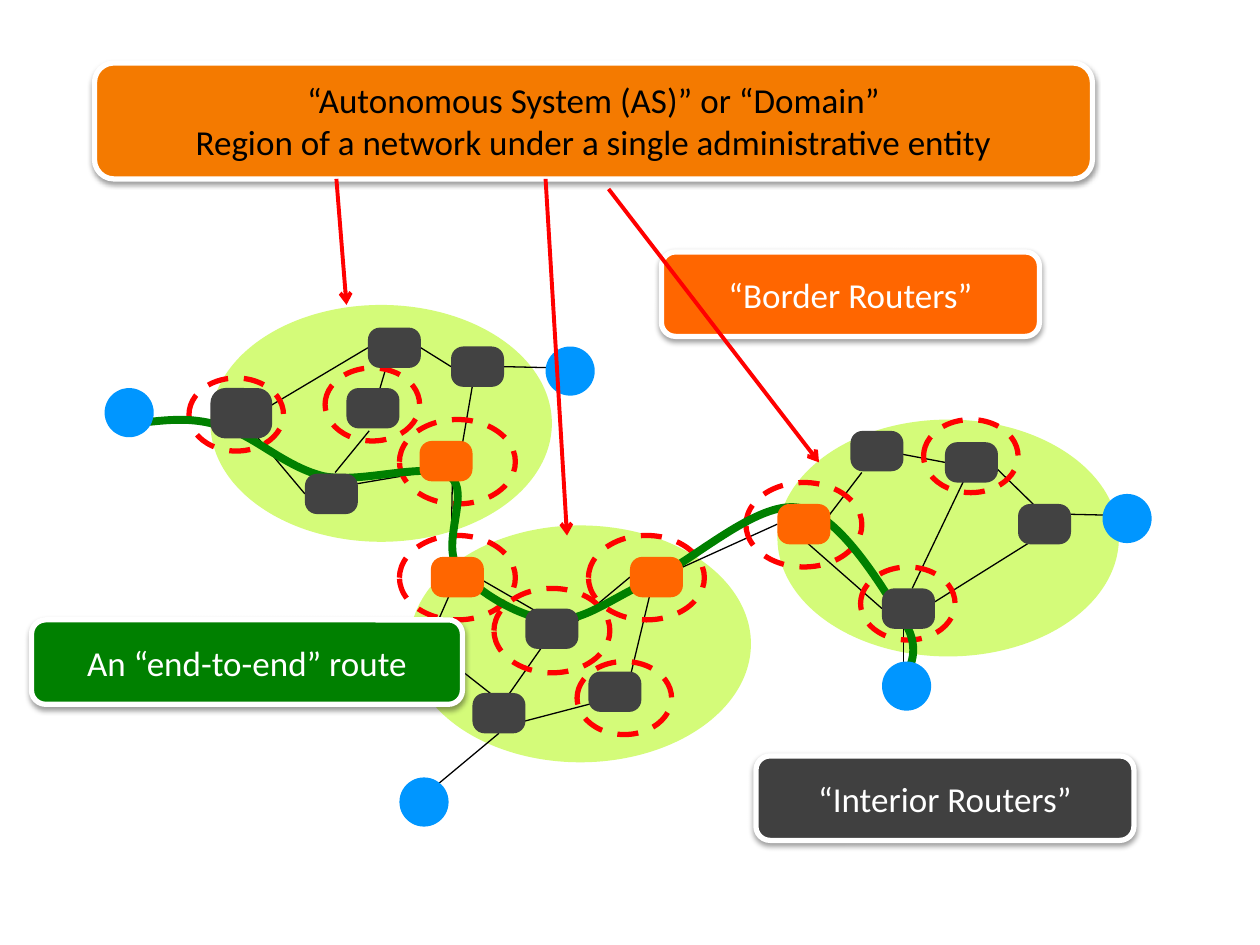
from lxml.etree import SubElement
from pptx import Presentation
from pptx.dml.color import RGBColor
from pptx.enum.dml import MSO_LINE
from pptx.enum.shapes import MSO_CONNECTOR, MSO_SHAPE
from pptx.enum.text import MSO_ANCHOR, PP_ALIGN
from pptx.oxml.ns import qn
from pptx.util import Emu, Pt

PX = 9144  # 100 px to the inch

BLACK, WHITE, RED, GREEN = "000000", "FFFFFF", "FF0000", "008000"
LIME, BLUE, ORANGE, GRAY = "D4FB79", "0096FF", "FF6600", "424242"

DOMAINS = [(325, 417), (617, 333), (167, 242)]
DOMAIN_SIZE = (271, 188)
HOSTS = [(83, 308), (317, 617), (433, 275), (700, 525), (875, 392)]
HOST_SIZE = (39, 39)

INTERIOR_ROUTERS = [(242, 376), (292, 260), (275, 308), (358, 275), (375, 550), (417, 483),
                    (467, 533), (750, 351), (675, 342), (700, 467), (808, 400)]
BORDER_ROUTERS = [(617, 400), (333, 350), (342, 442), (500, 442)]
ROUTER_SIZE = (42, 32)
EDGE_ROUTER = (167, 308, 49, 40)

BORDER_RINGS = [(467, 425), (592, 383), (317, 333), (317, 425)]
INTERIOR_RINGS = [(150, 300, 75, 58), (392, 467, 92, 67), (258, 292, 75, 58),
                  (458, 525, 75, 58), (733, 333, 75, 58), (683, 450, 75, 58)]
RING_SIZE = (92, 67)

LINKS = [
    (117, 332, 160, 332), (400, 291, 443, 292), (842, 408, 885, 409), (342, 627, 396, 582),
    (208, 326, 292, 274), (376, 300, 366, 358), (200, 342, 242, 391), (293, 342, 266, 375),
    (283, 384, 342, 374), (358, 291, 333, 275), (309, 283, 299, 317), (359, 383, 358, 440),
    (434, 490, 375, 456), (341, 508, 359, 467), (357, 525, 399, 558), (517, 467, 499, 542),
    (500, 457, 458, 493), (410, 574, 475, 557), (399, 558, 434, 508), (617, 416, 542, 450),
    (634, 425, 700, 482), (826, 425, 735, 482), (750, 366, 708, 359), (684, 375, 658, 409),
    (826, 406, 785, 366), (724, 467, 768, 375), (717, 533, 717, 498),
]
ARROWS = [(267, 142, 275, 242), (433, 142, 450, 425), (483, 150, 650, 367)]

# Start point, then two control points and an end point for every curve
ROUTE = [(117, 335),
         (136, 333), (155, 331), (178, 339), (202, 346), (227, 371), (257, 378),
         (287, 384), (339, 366), (357, 378), (374, 390), (350, 430), (363, 450),
         (377, 469), (412, 490), (437, 492), (463, 494), (483, 476), (516, 461),
         (549, 446), (601, 397), (634, 403), (668, 408), (704, 473), (718, 494),
         (732, 516), (720, 533), (720, 533)]

BACK_BANNERS = [
    ((600, 600, 300, 67), "404040", WHITE, ["“Interior Routers”"]),
    ((75, 50, 792, 92), "F47A00", BLACK,
     ["“Autonomous System (AS)” or “Domain”",
      "Region of a network under a single administrative entity"]),
]
FRONT_BANNERS = [
    ((525, 200, 300, 67), ORANGE, WHITE, ["“Border Routers”"]),
    ((25, 492, 342, 67), GREEN, WHITE, ["An “end-to-end” route"]),
]


def color(value):
    return RGBColor.from_string(value)


def draw_line(line, value, points):
    line.color.rgb = color(value)
    line.width = Pt(points)


def add_shape(shapes, kind, place, fill=None):
    shape = shapes.add_shape(kind, *(Emu(n * PX) for n in place))
    shape.shadow.inherit = False
    if fill:
        shape.fill.solid()
        shape.fill.fore_color.rgb = color(fill)
    else:
        shape.fill.background()
    shape.line.fill.background()
    return shape


def add_ring(shapes, place):
    ring = add_shape(shapes, MSO_SHAPE.OVAL, place)
    draw_line(ring.line, RED, 3)
    ring.line.dash_style = MSO_LINE.DASH


def add_router(shapes, place, fill):
    router = add_shape(shapes, MSO_SHAPE.ROUNDED_RECTANGLE, place, fill)
    router.adjustments[0] = 0.3
    return router


def add_line(shapes, ends, value, points):
    line = shapes.add_connector(MSO_CONNECTOR.STRAIGHT, *(Emu(n * PX) for n in ends))
    draw_line(line.line, value, points)
    SubElement(line._element.spPr, qn("a:effectLst"))
    return line


def add_arrow(shapes, ends):
    arrow = add_line(shapes, ends, RED, 2.25)
    SubElement(arrow.line._get_or_add_ln(), qn("a:tailEnd"), type="arrow")


def add_route(shapes):
    """Draw the route, turning each three straight steps into one curve."""
    builder = shapes.build_freeform(*ROUTE[0], scale=PX)
    builder.add_line_segments(ROUTE[1:], close=False)
    route = builder.convert_to_shape()
    route.shadow.inherit = False
    route.fill.background()
    draw_line(route.line, GREEN, 4.5)
    outline = next(route._element.iter(qn("a:path")))
    steps = outline.findall(qn("a:lnTo"))
    for first in range(0, len(steps), 3):
        curve = SubElement(outline, qn("a:cubicBezTo"))
        for step in steps[first:first + 3]:
            curve.append(step[0])
            outline.remove(step)


def add_banner(shapes, place, fill, text_color, lines):
    banner = add_shape(shapes, MSO_SHAPE.ROUNDED_RECTANGLE, place, fill)
    draw_line(banner.line, WHITE, 3)
    effects = banner._element.spPr.find(qn("a:effectLst"))
    shadow = SubElement(effects, qn("a:outerShdw"), blurRad="40000", dist="20000",
                        dir="5400000", rotWithShape="0")
    black = SubElement(shadow, qn("a:srgbClr"), val=BLACK)
    SubElement(black, qn("a:alpha"), val="38000")

    frame = banner.text_frame
    frame.word_wrap = False
    frame.vertical_anchor = MSO_ANCHOR.MIDDLE
    para = frame.paragraphs[0]
    para.alignment = PP_ALIGN.CENTER
    for number, line in enumerate(lines):
        if number:
            para.add_line_break()
        span = para.add_run()
        span.text = line
        for name, value in {"size": Pt(20), "name": "Calibri"}.items():
            setattr(span.font, name, value)
        span.font.color.rgb = color(text_color)


def join(link, routers):
    """Connect each end of the link that lies at the middle of a router's side."""
    ends = [(link.begin_x, link.begin_y, link.begin_connect),
            (link.end_x, link.end_y, link.end_connect)]
    for x, y, connect in ends:
        for router in routers:
            left, top, width, height = router.left, router.top, router.width, router.height
            sides = [(left + width / 2, top), (left, top + height / 2),
                     (left + width / 2, top + height), (left + width, top + height / 2)]
            for site, (side_x, side_y) in enumerate(sides):
                if max(abs(x - side_x), abs(y - side_y)) <= 2 * PX:
                    connect(router, site)


def main():
    deck = Presentation()
    deck.slide_width, deck.slide_height = Emu(1000 * PX), Emu(750 * PX)
    shapes = deck.slides.add_slide(deck.slide_layouts[6]).shapes

    for corner in DOMAINS:
        add_shape(shapes, MSO_SHAPE.OVAL, corner + DOMAIN_SIZE, LIME)
    links = [add_line(shapes, ends, BLACK, 0.75) for ends in LINKS]
    for banner in BACK_BANNERS:
        add_banner(shapes, *banner)
    for corner in BORDER_RINGS:
        add_ring(shapes, corner + RING_SIZE)
    ring_group = shapes.add_group_shape().shapes
    for place in INTERIOR_RINGS:
        add_ring(ring_group, place)
    add_route(shapes)
    for corner in HOSTS:
        add_shape(shapes, MSO_SHAPE.OVAL, corner + HOST_SIZE, BLUE)

    routers = [add_router(shapes, EDGE_ROUTER, GRAY)]
    for corners, fill in ((INTERIOR_ROUTERS, GRAY), (BORDER_ROUTERS, ORANGE)):
        routers += [add_router(shapes, corner + ROUTER_SIZE, fill) for corner in corners]
    for link in links:
        join(link, routers)

    for banner in FRONT_BANNERS:
        add_banner(shapes, *banner)
    arrow_group = shapes.add_group_shape().shapes
    for ends in ARROWS:
        add_arrow(arrow_group, ends)
    deck.save("out.pptx")


if __name__ == "__main__":
    main()
